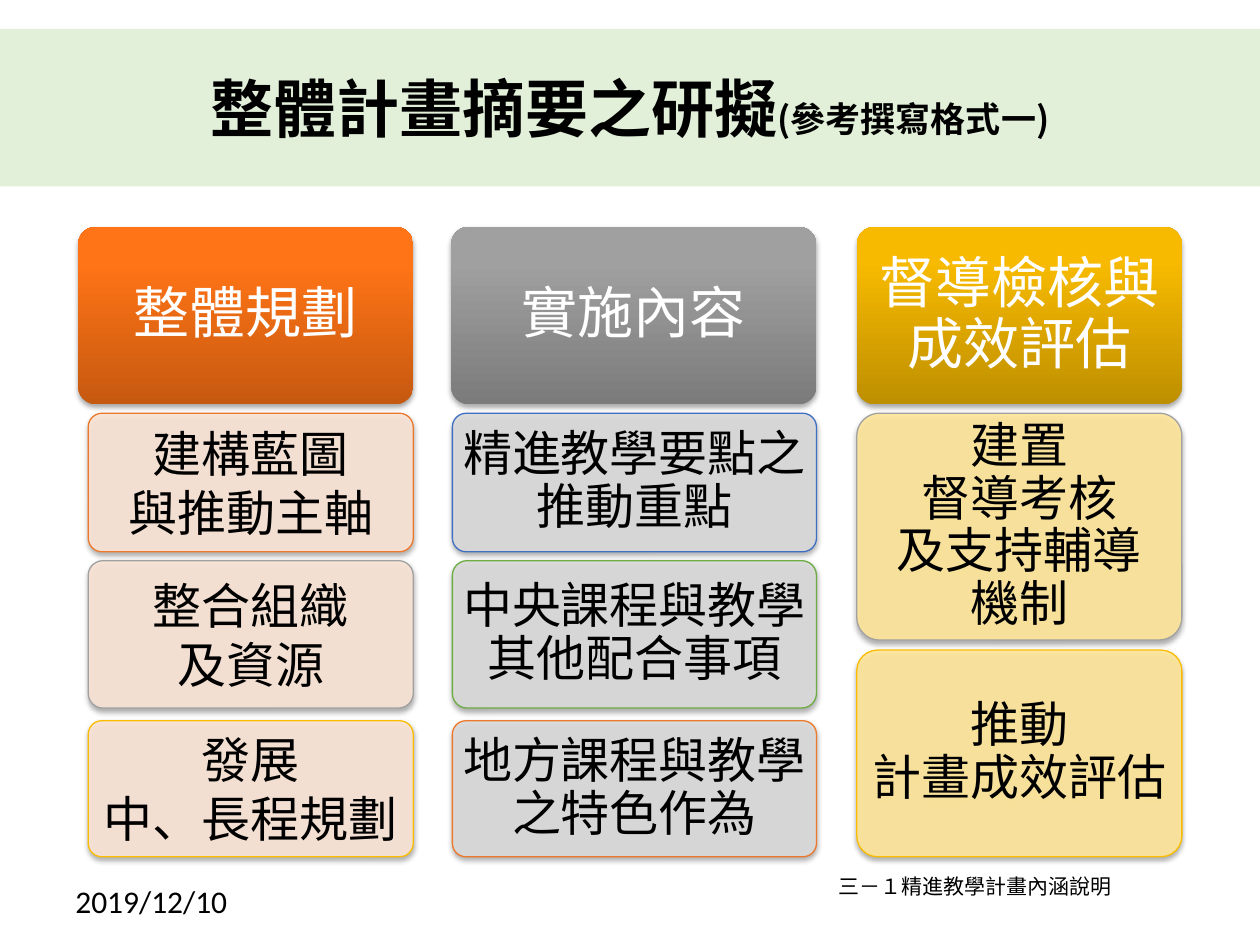
import copy
from dataclasses import dataclass

import lxml.etree
import pptx
import pptx.dml.color
import pptx.enum.shapes
import pptx.enum.text
import pptx.oxml
import pptx.oxml.ns
import pptx.util

RGBColor = pptx.dml.color.RGBColor
Inches = pptx.util.Inches
Pt = pptx.util.Pt
qn = pptx.oxml.ns.qn
ALIGN = pptx.enum.text.PP_ALIGN
MIDDLE = pptx.enum.text.MSO_ANCHOR.MIDDLE
ROUND = pptx.enum.shapes.MSO_SHAPE.ROUNDED_RECTANGLE

HAN = "Noto Sans CJK SC"
LATIN = "Calibri"
BLACK = RGBColor(0x00, 0x00, 0x00)
WHITE = RGBColor(0xFF, 0xFF, 0xFF)
MINT = RGBColor(0xE2, 0xF0, 0xD9)
ORANGE = RGBColor(0xEC, 0x79, 0x2B)
GRAY = RGBColor(0xA1, 0xA1, 0xA1)
GOLD = RGBColor(0xF9, 0xBC, 0x00)
BLUE = RGBColor(0x3F, 0x6F, 0xC3)
GREEN = RGBColor(0x6D, 0xAC, 0x43)
PEACH = RGBColor(0xFB, 0xE5, 0xD6)
SILVER = RGBColor(0xDB, 0xDB, 0xDB)
CREAM = RGBColor(0xFF, 0xE6, 0x99)
RUST = (RGBColor(0xC6, 0x59, 0x10), RGBColor(0xFF, 0x74, 0x16), RGBColor(0xFF, 0x75, 0x17))
STEEL = (RGBColor(0x7B, 0x7B, 0x7B), RGBColor(0xA0, 0xA0, 0xA0), GRAY)
AMBER = (RGBColor(0xBE, 0x8F, 0x00), RGBColor(0xF7, 0xBA, 0x00), RGBColor(0xF8, 0xBB, 0x00))

HEAD_TOP, HEAD_HIGH = 1.8, 1.41
THREE = ((3.28, 1.1), (4.45, 1.17), (5.72, 1.08))
TWO = ((3.28, 1.8), (5.16, 1.64))
SHADOW = (
    '<a:effectLst xmlns:a="http://schemas.openxmlformats.org/drawingml/2006/main">'
    '<a:outerShdw blurRad="39370" dist="22860" dir="5400000" algn="ctr" rotWithShape="0">'
    '<a:srgbClr val="000000"><a:alpha val="35000"/></a:srgbClr>'
    '</a:outerShdw></a:effectLst>'
)


@dataclass
class Card:
    lines: tuple[str, ...]
    edge: RGBColor


@dataclass
class Column:
    head: str
    left: float
    wide: float
    inset: float  # how far the cards start right of the header
    shades: tuple[RGBColor, ...]
    fill: RGBColor
    space: float
    rows: tuple[tuple[float, float], ...]
    cards: tuple[Card, ...]


COLUMNS = (
    Column("整體規劃", 0.62, 2.66, 0.08, RUST, PEACH, 1.0, THREE, (
        Card(("建構藍圖", "與推動主軸"), ORANGE),
        Card(("整合組織", "及資源"), GRAY),
        Card(("發展", "中、長程規劃"), GOLD))),
    Column("實施內容", 3.58, 2.9, 0.01, STEEL, SILVER, 0.9, THREE, (
        Card(("精進教學要點之推動重點",), BLUE),
        Card(("中央課程與教學其他配合事項",), GREEN),
        Card(("地方課程與教學之特色作為",), ORANGE))),
    Column("督導檢核與成效評估", 6.8, 2.58, 0, AMBER, CREAM, 0.9, TWO, (
        Card(("建置", "督導考核", "及支持輔導", "機制"), GRAY),
        Card(("推動", "計畫成效評估"), GOLD))),
)


def add_run(para, text: str, size: float, color=BLACK, face: str = HAN, bold: bool = False) -> None:
    run = para.add_run()
    run.text = text
    font = run.font
    font.size, font.name, font.bold = Pt(size), face, bold
    font.color.rgb = color
    east = lxml.etree.Element(qn("a:ea"), typeface=face)
    font._element.find(qn("a:latin")).addnext(east)


def add_box(slide, left: float, top: float, wide: float, high: float, lines: tuple[str, ...],
            size: float, color: RGBColor, space: float):
    box = slide.shapes.add_shape(ROUND, Inches(left), Inches(top), Inches(wide), Inches(high))
    box.adjustments[0] = 0.1
    frame = box.text_frame
    frame.word_wrap = True
    frame.vertical_anchor = MIDDLE
    frame.margin_left = frame.margin_right = Inches(0.03)
    frame.margin_top = frame.margin_bottom = Inches(0.03)
    for i, line in enumerate(lines):
        para = frame.add_paragraph() if i else frame.paragraphs[0]
        para.alignment = ALIGN.CENTER
        para.line_spacing = space
        add_run(para, line, size, color)
    return box


def add_shade(box) -> None:
    """Soft shadow below the box; call after fill and line are set."""
    box.shadow.inherit = False
    old = box._element.spPr.find(qn("a:effectLst"))
    old.getparent().replace(old, pptx.oxml.parse_xml(SHADOW))


def add_head(slide, col: Column) -> None:
    box = add_box(slide, col.left, HEAD_TOP, col.wide, HEAD_HIGH, (col.head,), 32, WHITE, 0.9)
    box.fill.gradient()
    box.fill.gradient_angle = 90
    last = box._element.spPr.find(qn("a:gradFill")).find(qn("a:gsLst"))[-1]
    last.addnext(copy.deepcopy(last))
    for stop, place, shade in zip(box.fill.gradient_stops, (0, 0.8, 1), col.shades):
        stop.position = place
        stop.color.rgb = shade
    box.line.fill.background()
    add_shade(box)


def add_card(slide, col: Column, card: Card, top: float, high: float) -> None:
    box = add_box(slide, col.left + col.inset, top, col.wide - col.inset, high,
                  card.lines, 28, BLACK, col.space)
    box.fill.solid()
    box.fill.fore_color.rgb = col.fill
    tint = box._element.spPr.find(qn("a:solidFill"))[0]
    lxml.etree.SubElement(tint, qn("a:alpha"), val="90000")
    box.line.color.rgb = card.edge
    box.line.width = Pt(0.75)
    add_shade(box)


def add_note(slide, left: float, top: float, wide: float, high: float,
             text: str, size: float, face: str) -> None:
    note = slide.shapes.add_textbox(Inches(left), Inches(top), Inches(wide), Inches(high))
    note.text_frame.word_wrap = True
    add_run(note.text_frame.paragraphs[0], text, size, face=face)


def main() -> None:
    deck = pptx.Presentation()
    deck.slide_width, deck.slide_height = Inches(10), Inches(7.5)
    slide = deck.slides.add_slide(deck.slide_layouts[5])

    # Title band
    title = slide.shapes.title
    title.left, title.top = Inches(0), Inches(0.23)
    title.width, title.height = Inches(10), Inches(1.25)
    title.fill.solid()
    title.fill.fore_color.rgb = MINT
    title.text_frame.vertical_anchor = MIDDLE
    para = title.text_frame.paragraphs[0]
    para.alignment = ALIGN.CENTER
    add_run(para, "整體計畫摘要之研擬", 36, bold=True)
    add_run(para, "(參考撰寫格式一)", 20, bold=True)

    # Columns of cards
    for col in COLUMNS:
        add_head(slide, col)
        for card, (top, high) in zip(col.cards, col.rows):
            add_card(slide, col, card, top, high)

    # Footer
    add_note(slide, 6.56, 6.88, 3.17, 0.39, "三－１精進教學計畫內涵說明", 12, HAN)
    add_note(slide, 0.5, 6.95, 2.33, 0.4, "2019/12/10", 18, LATIN)

    deck.save("out.pptx")


if __name__ == "__main__":
    main()
